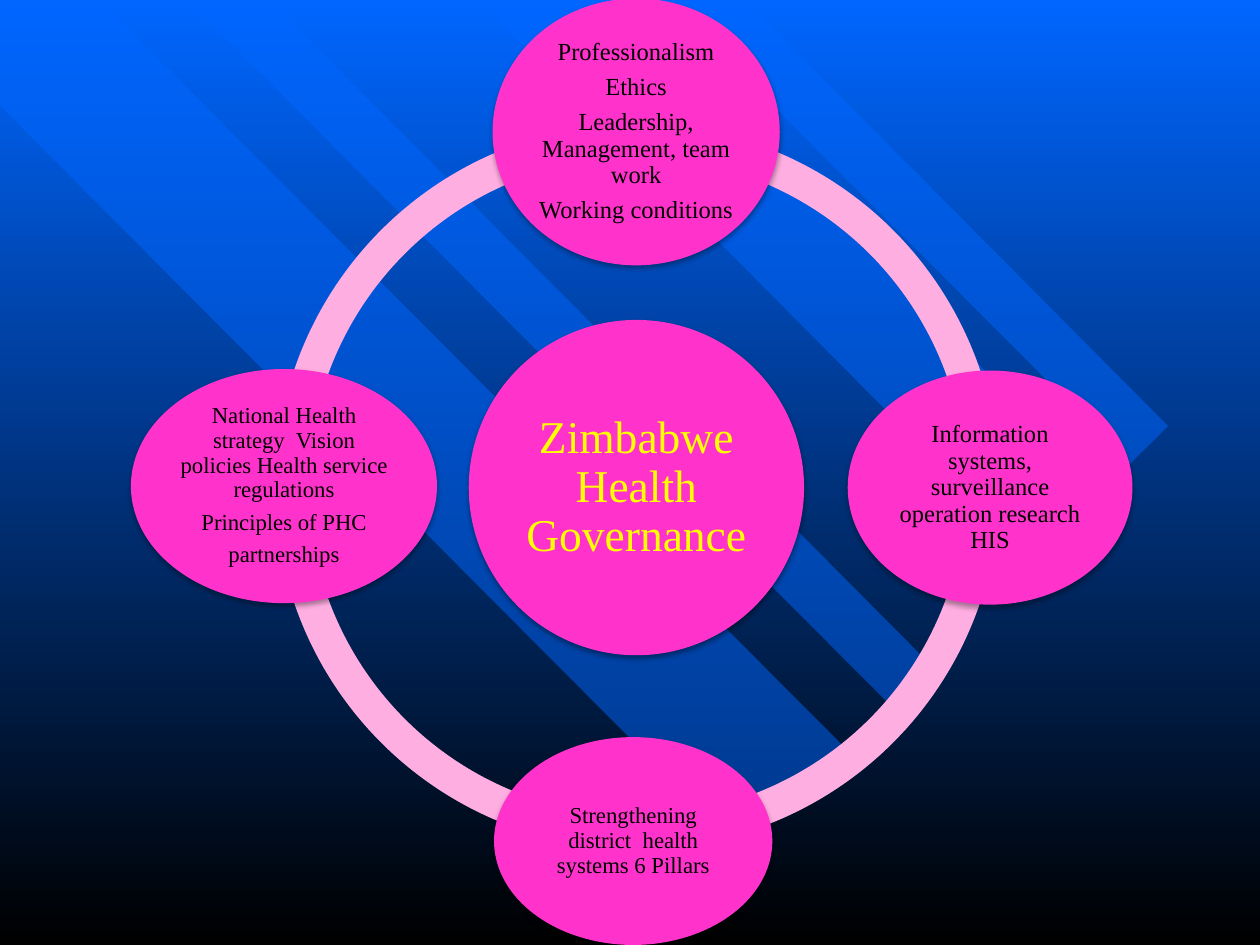
from lxml.etree import SubElement
from pptx import Presentation
from pptx.dml.color import RGBColor
from pptx.enum.shapes import MSO_SHAPE as Preset
from pptx.enum.text import MSO_ANCHOR as Anchor, PP_ALIGN as Align
from pptx.oxml import parse_xml
from pptx.oxml.ns import nsdecls, qn
from pptx.util import Cm, Pt

COLORS = {
    "sky": "0066FF",
    "night": "000000",
    "ring": "FFAEE2",
    "circle": "FF33CC",
    "centre_text": "FFFF00",
    "text": "000000",
}
FONT = "Times New Roman"


def paint(shape, color):
    shape.fill.solid()
    shape.fill.fore_color.rgb = RGBColor.from_string(COLORS[color])
    shape.line.fill.background()
    shape.shadow.inherit = False


def cast_shadow(shape, distance, opacity):
    effects = shape._element.spPr.find(qn("a:effectLst"))
    effects.append(parse_xml(
        f'<a:outerShdw {nsdecls("a")} blurRad="{Pt(3.1)}" dist="{Pt(distance)}" '
        f'dir="5400000" rotWithShape="0"><a:srgbClr val="000000">'
        f'<a:alpha val="{opacity * 1000}"/></a:srgbClr></a:outerShdw>'
    ))


deck = Presentation()
deck.slide_width, deck.slide_height = Cm(25.4), Cm(19.05)
slide = deck.slides.add_slide(deck.slide_layouts[6])

sky = slide.background.fill
sky.gradient()
sky.gradient_angle = 270
for stop, color, position in zip(sky.gradient_stops, ("sky", "night"), (0, 1)):
    stop.color.rgb = RGBColor.from_string(COLORS[color])
    stop.position = position

bands = [
    [(17.02, 15.06), (2.01, 0), (0, 0), (0, 2.13), (14.96, 17.15)],
    [(5.44, 0), (18.75, 13.39), (17.93, 14.2), (3.78, 0)],
    [(12.42, 0), (22.25, 9.88), (20.85, 11.28), (9.65, 0)],
    [(13.46, 0), (22.78, 9.35), (23.55, 8.59), (15.01, 0)],
]
for corners in bands:
    points = [(Cm(x), Cm(y)) for x, y in corners]
    outline = slide.shapes.build_freeform(*points[0])
    outline.add_line_segments(points[1:], close=True)
    band = outline.convert_to_shape()
    paint(band, "sky")
    band_color = band._element.spPr.find(qn("a:solidFill"))[0]
    SubElement(band_color, qn("a:alpha"), val="50000")

ring_arcs = [
    (5.54, 2.49, 108.08, 161.68),
    (5.54, 2.46, 54.56, 107.93),
    (5.49, 2.46, 0.16, 54.25),
    (5.49, 2.49, 162, 0),
]
for left, top, start, end in ring_arcs:
    arc = slide.shapes.add_shape(
        Preset.BLOCK_ARC, Cm(left), Cm(top), Cm(14.66), Cm(14.66))
    for index, value in enumerate((start, end, 0.046)):
        arc.adjustments[index] = value
    paint(arc, "ring")

centre = ((9.45, 6.45, 6.76, 6.76), 26, "centre_text", 0.1, 1.6, 38,
          ["Zimbabwe Health Governance"])
satellites = [
    ((9.93, -0.03, 5.79, 5.38), 14,
     ["Professionalism", "Ethics", "Leadership, Management, team work",
      "Working conditions"]),
    ((17.09, 7.47, 5.74, 4.72), 14,
     ["Information systems, surveillance operation research HIS"]),
    ((9.96, 14.86, 5.61, 4.19), 13,
     ["Strengthening district  health systems 6 Pillars"]),
    ((2.64, 7.44, 6.17, 4.72), 13,
     ["National Health strategy  Vision policies Health service regulations",
      "Principles of PHC", "partnerships"]),
]
circles = [centre] + [
    (box, size, "text", 0.05, 1.8, 35, topics) for box, size, topics in satellites
]
for box, size, text_color, inset, distance, opacity, topics in circles:
    circle = slide.shapes.add_shape(Preset.OVAL, *(Cm(length) for length in box))
    paint(circle, "circle")
    cast_shadow(circle, distance, opacity)
    frame = circle.text_frame
    frame.word_wrap = True
    frame.vertical_anchor = Anchor.MIDDLE
    frame.margin_left = frame.margin_right = Cm(inset)
    frame.margin_top = frame.margin_bottom = Cm(inset)
    frame.text = "\n".join(topics)
    for topic in frame.paragraphs:
        topic.alignment = Align.CENTER
        topic.line_spacing = 0.9
        topic.space_after = Pt(size * 0.35)
        topic.font.name = FONT
        topic.font.size = Pt(size)
        topic.font.color.rgb = RGBColor.from_string(COLORS[text_color])

deck.save("out.pptx")
